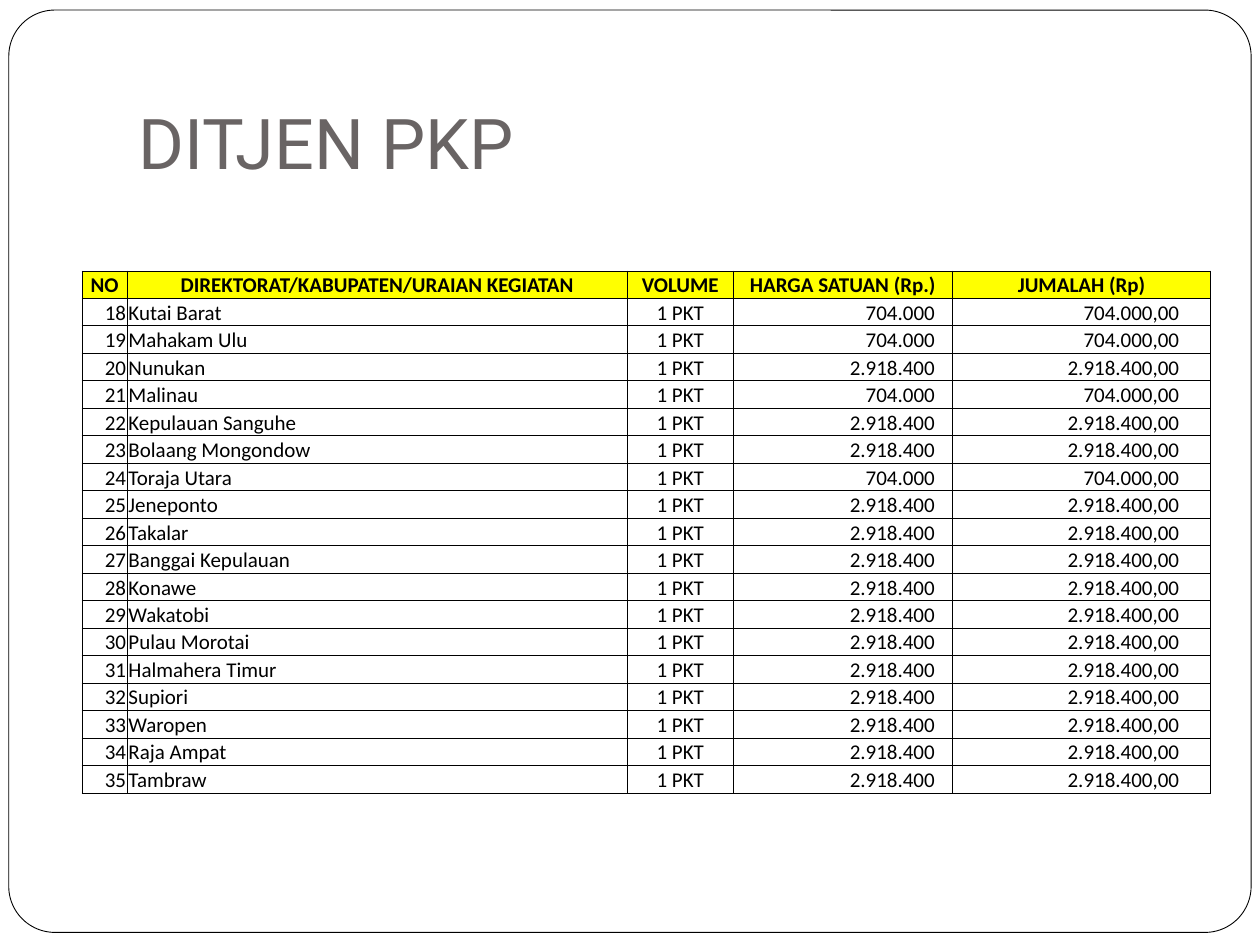
from dataclasses import dataclass

from lxml.etree import SubElement
from pptx import Presentation
from pptx.dml.color import RGBColor
from pptx.enum.shapes import MSO_SHAPE
from pptx.enum.text import MSO_ANCHOR, PP_ALIGN
from pptx.oxml.ns import qn
from pptx.util import Inches, Pt


@dataclass(frozen=True)
class Column:
    heading: str
    width: float
    align: PP_ALIGN
    right_margin: float = 0.01


COLUMNS = [
    Column("NO", 0.36, PP_ALIGN.RIGHT),
    Column("DIREKTORAT/KABUPATEN/URAIAN KEGIATAN", 3.97, PP_ALIGN.LEFT),
    Column("VOLUME", 0.84, PP_ALIGN.CENTER),
    Column("HARGA SATUAN (Rp.)", 1.74, PP_ALIGN.RIGHT, 0.14),
    Column("JUMALAH (Rp)", 2.05, PP_ALIGN.RIGHT, 0.25),
]
FIRST_NUMBER = 18
REGENCIES = [
    "Kutai Barat", "Mahakam Ulu", "Nunukan", "Malinau", "Kepulauan Sanguhe",
    "Bolaang Mongondow", "Toraja Utara", "Jeneponto", "Takalar",
    "Banggai Kepulauan", "Konawe", "Wakatobi", "Pulau Morotai",
    "Halmahera Timur", "Supiori", "Waropen", "Raja Ampat", "Tambraw",
]
LOW_PRICE_REGENCIES = {"Kutai Barat", "Mahakam Ulu", "Malinau", "Toraja Utara"}
TABLE_HEIGHT = 4.15


def rgb(value: str) -> RGBColor:
    return RGBColor.from_string(value)


def add_frame(slide) -> None:
    s = slide.shapes.add_shape(MSO_SHAPE.ROUNDED_RECTANGLE, Inches(0.07),
                               Inches(0.08), Inches(9.86), Inches(7.32))
    s.adjustments[0] = 0.05
    s.shadow.inherit = False
    s.fill.solid()
    s.fill.fore_color.rgb = rgb("FFFFFF")
    s.line.color.rgb = rgb("000000")
    s.line.width = Pt(0.5)


def add_title(slide, text: str) -> None:
    s = slide.shapes.add_textbox(Inches(1), Inches(0.31), Inches(8.5), Inches(1.25))
    tf = s.text_frame
    tf.word_wrap = True
    tf.vertical_anchor = MSO_ANCHOR.BOTTOM
    tf.margin_bottom = Inches(0.1)
    p = tf.paragraphs[0]
    p.text = text
    p.font.name = "Roboto"
    p.font.size = Pt(40)
    p.font.color.rgb = rgb("696464")


def add_borders(cell, color: str, width: Pt) -> None:
    properties = cell._tc.get_or_add_tcPr()
    for side in ("a:lnL", "a:lnR", "a:lnT", "a:lnB"):
        line = SubElement(properties, qn(side), w=str(width))
        fill = SubElement(line, qn("a:solidFill"))
        SubElement(fill, qn("a:srgbClr"), val=color)


def fill_cell(cell, text: str, column: Column, header: bool) -> None:
    add_borders(cell, "000000", Pt(0.5))
    if header:
        cell.fill.solid()
        cell.fill.fore_color.rgb = rgb("FFFF00")
    else:
        cell.fill.background()
    cell.margin_left = cell.margin_top = Inches(0.01)
    cell.margin_right = Inches(0.01 if header else column.right_margin)
    cell.margin_bottom = 0
    cell.vertical_anchor = MSO_ANCHOR.BOTTOM
    p = cell.text_frame.paragraphs[0]
    p.text = text
    p.alignment = PP_ALIGN.CENTER if header else column.align
    p.font.name = "Calibri"
    p.font.size = Pt(12)
    p.font.bold = header
    p.font.color.rgb = rgb("000000")


def budget_rows() -> list[list[str]]:
    rows = [[column.heading for column in COLUMNS]]
    for number, regency in enumerate(REGENCIES, FIRST_NUMBER):
        price = "704.000" if regency in LOW_PRICE_REGENCIES else "2.918.400"
        rows.append([str(number), regency, "1 PKT", price, f"{price},00"])
    return rows


def add_budget_table(slide, rows: list[list[str]]) -> None:
    width = sum(column.width for column in COLUMNS)
    table = slide.shapes.add_table(len(rows), len(COLUMNS), Inches(0.65), Inches(2.15),
                                   Inches(width), Inches(TABLE_HEIGHT)).table
    table.first_row = False
    table.horz_banding = False
    for column, table_column in zip(COLUMNS, table.columns):
        table_column.width = Inches(column.width)
    for i, row in enumerate(rows):
        table.rows[i].height = Inches(TABLE_HEIGHT / len(rows))
        for j, (text, column) in enumerate(zip(row, COLUMNS)):
            fill_cell(table.cell(i, j), text, column, header=i == 0)


def main() -> None:
    prs = Presentation()
    prs.slide_width = Inches(10)
    prs.slide_height = Inches(7.5)
    slide = prs.slides.add_slide(prs.slide_layouts[6])
    add_frame(slide)
    add_title(slide, "DITJEN PKP")
    add_budget_table(slide, budget_rows())
    prs.save("out.pptx")


if __name__ == "__main__":
    main()
